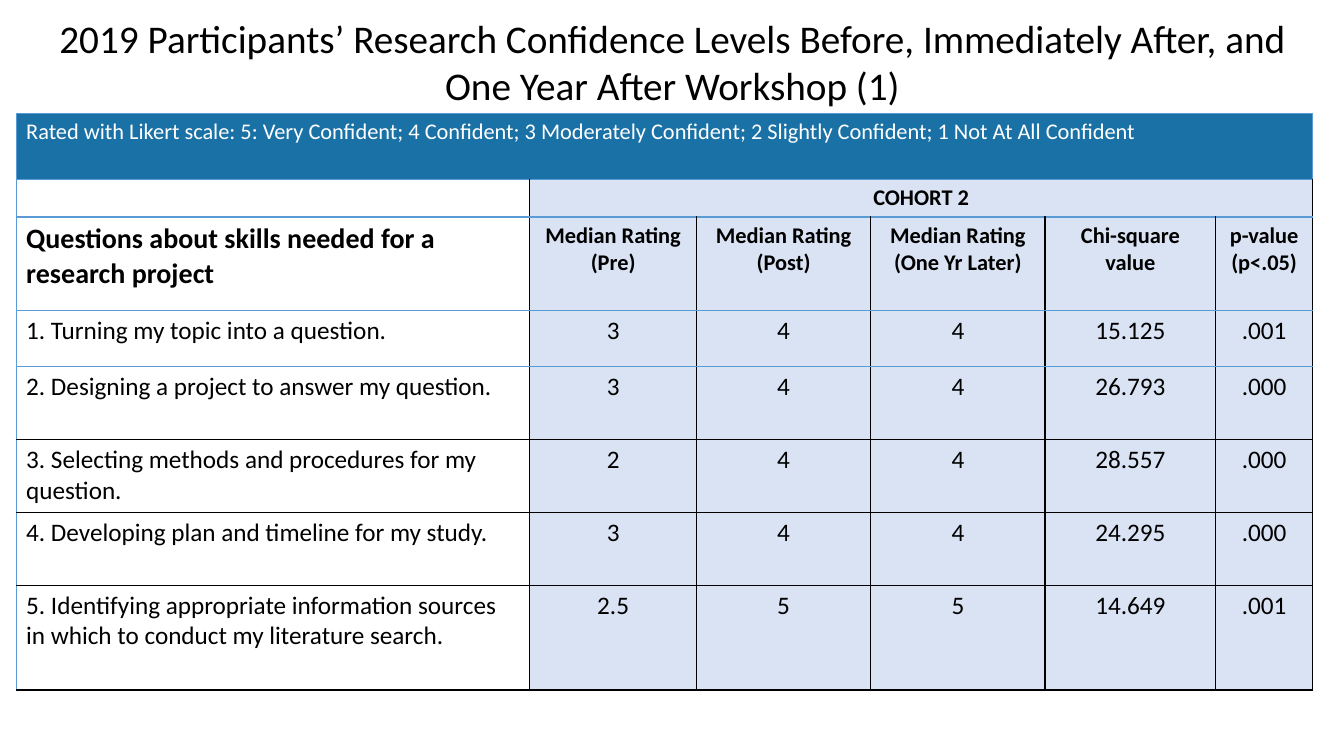
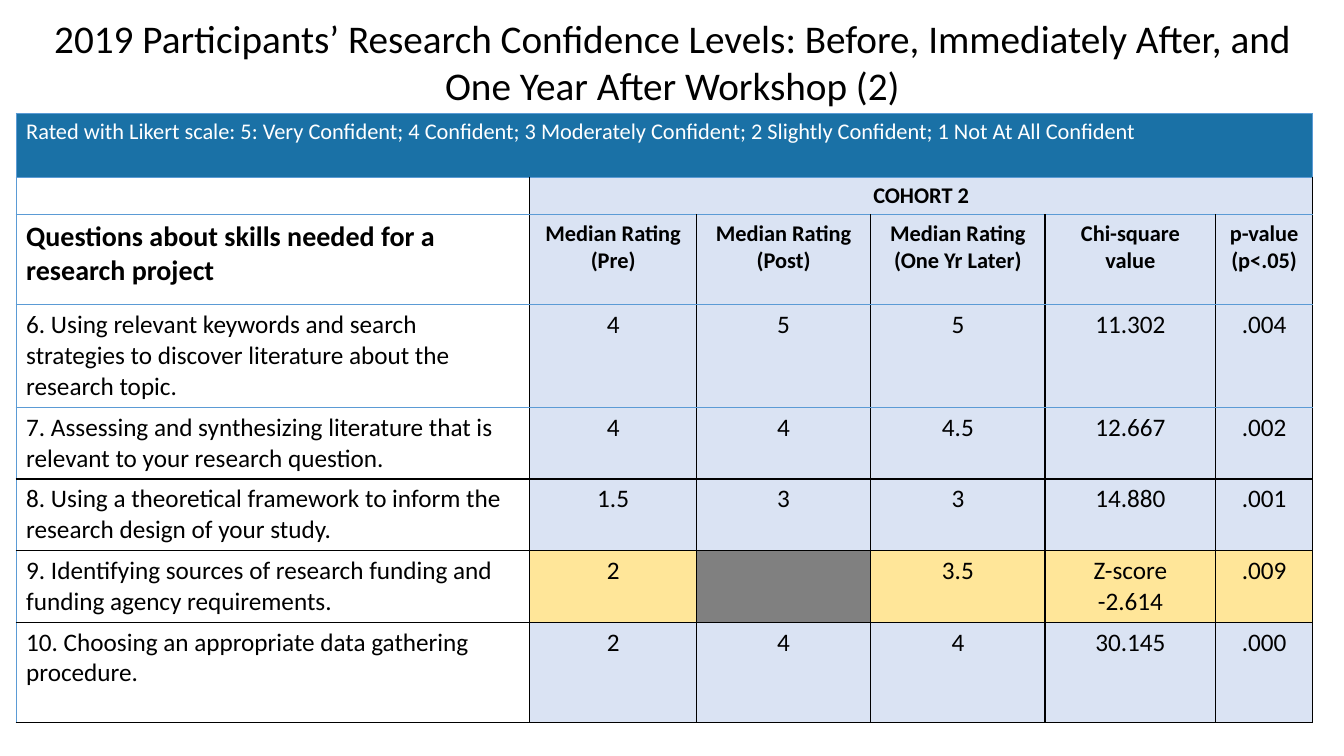
"""Build two slides of survey tables on research confidence."""
from dataclasses import dataclass

from lxml import etree
from pptx import Presentation
from pptx.dml.color import RGBColor
from pptx.enum.text import MSO_ANCHOR, MSO_AUTO_SIZE, PP_ALIGN
from pptx.oxml.ns import qn
from pptx.slide import Slide
from pptx.table import Table, _Cell
from pptx.util import Pt

LEFT, MID = PP_ALIGN.LEFT, PP_ALIGN.CENTER
TOP = MSO_ANCHOR.TOP
FIXED = MSO_AUTO_SIZE.NONE
TITLE_ONLY = 5


@dataclass(frozen=True)
class Theme:
    font: str = "Calibri"
    black: str = "000000"
    white: str = "FFFFFF"
    band: str = "1A71A6"
    rule: str = "5B9BD5"
    tint: str = "DAE3F3"
    gold: str = "FFE699"
    gray: str = "808080"
    title: int = 28
    lead: int = 20
    body: int = 18
    small: int = 16
    line: int = 1


@dataclass(frozen=True)
class Look:
    size: int
    fill: str
    ink: str
    bold: bool = False
    align: PP_ALIGN = MID


@dataclass(frozen=True)
class Item:
    text: str
    values: tuple[str, ...]
    marked: bool = False


@dataclass(frozen=True)
class Page:
    title: str
    heights: tuple[float, ...]
    items: tuple[Item, ...]


THEME = Theme()
BAND = Look(THEME.small, THEME.band, THEME.white, align=LEFT)
BLANK = Look(THEME.small, THEME.white, THEME.black)
HEAD = Look(THEME.small, THEME.tint, THEME.black, True)
LEAD = Look(THEME.lead, THEME.white, THEME.black, True, LEFT)
ITEM = Look(THEME.body, THEME.white, THEME.black, align=LEFT)
VALUE = Look(THEME.body, THEME.tint, THEME.black)
MARK = Look(THEME.body, THEME.gold, THEME.black)
VOID = Look(THEME.body, THEME.gray, THEME.black)

WIDTHS = (367, 119, 124.5, 124.5, 122, 69)
BLUE_ROWS = 4
SCALE = ("Rated with Likert scale: 5: Very Confident; 4 Confident; "
         "3 Moderately Confident; 2 Slightly Confident; 1 Not At All Confident")
LABELS = (
    "Questions about skills needed for a research project",
    "Median Rating\n(Pre)",
    "Median Rating\n(Post)",
    "Median Rating\n(One Yr Later)",
    "Chi-square value",
    "p-value (p<.05)",
)

PAGES = (
    Page(
        "2019 Participants’ Research Confidence Levels Before, "
        "Immediately After, and One Year After Workshop (1)",
        (47, 27, 67, 40, 52, 52, 52, 75),
        (
            Item("1. Turning my topic into a question.",
                 ("3", "4", "4", "15.125", ".001")),
            Item("2. Designing a project to answer my question.",
                 ("3", "4", "4", "26.793", ".000")),
            Item("3. Selecting methods and procedures for my question.",
                 ("2", "4", "4", "28.557", ".000")),
            Item("4. Developing plan and timeline for my study.",
                 ("3", "4", "4", "24.295", ".000")),
            Item("5. Identifying appropriate information sources in which "
                 "to conduct my literature search.",
                 ("2.5", "5", "5", "14.649", ".001")),
        ),
    ),
    Page(
        "2019 Participants’ Research Confidence Levels: Before, "
        "Immediately After, and One Year After Workshop (2)",
        (45.5, 26.5, 64.5, 72, 50.5, 50.5, 50.5, 71.5),
        (
            Item("6. Using relevant keywords and search strategies to "
                 "discover literature about the research topic.",
                 ("4", "5", "5", "11.302", ".004")),
            Item("7. Assessing and synthesizing literature that is relevant "
                 "to your research question.",
                 ("4", "4", "4.5", "12.667", ".002")),
            Item("8. Using a theoretical framework to inform the research "
                 "design of your study.",
                 ("1.5", "3", "3", "14.880", ".001")),
            Item("9. Identifying sources of research funding and funding "
                 "agency requirements.",
                 ("2", "", "3.5", "Z-score\n-2.614", ".009"), True),
            Item("10. Choosing an appropriate data gathering procedure.",
                 ("2", "4", "4", "30.145", ".000")),
        ),
    ),
)


def add_rules(cell: _Cell, row: int, col: int) -> None:
    """Draw the four borders of a cell, blue around the head rows."""
    blue = {
        "a:lnL": row == 0 or col == 0,
        "a:lnR": row == 0,
        "a:lnT": row <= BLUE_ROWS,
        "a:lnB": row < BLUE_ROWS,
    }
    props = cell._tc.get_or_add_tcPr()
    for tag, is_blue in blue.items():
        line = etree.SubElement(props, qn(tag), w=str(Pt(THEME.line)))
        fill = etree.SubElement(line, qn("a:solidFill"))
        etree.SubElement(fill, qn("a:srgbClr"),
                         val=THEME.rule if is_blue else THEME.black)


def fill_cell(cell: _Cell, text: str, look: Look) -> None:
    """Set the text, type and fill of a cell."""
    cell.fill.solid()
    cell.fill.fore_color.rgb = RGBColor.from_string(look.fill)
    cell.vertical_anchor = TOP
    cell.text_frame.text = text
    for para in cell.text_frame.paragraphs:
        para.alignment = look.align
        for run in para.runs:
            run.font.name = THEME.font
            run.font.size = Pt(look.size)
            run.font.bold = look.bold
            run.font.color.rgb = RGBColor.from_string(look.ink)
        if not para.runs:
            etree.SubElement(para._p, qn("a:endParaRPr"),
                             sz=str(look.size * 100))


def list_rows(page: Page) -> list[list[tuple[str, Look]]]:
    """Return the text and look of every cell, row by row."""
    span = len(WIDTHS) - 1
    rows = [
        [(SCALE, BAND)] + [("", BAND)] * span,
        [("", BLANK), ("COHORT 2", HEAD)] + [("", HEAD)] * (span - 1),
        [(text, HEAD if col else LEAD) for col, text in enumerate(LABELS)],
    ]
    for item in page.items:
        look = MARK if item.marked else VALUE
        rows.append([(item.text, ITEM)]
                    + [(val, look if val else VOID) for val in item.values])
    return rows


def add_grid(slide: Slide, page: Page) -> Table:
    """Add the ratings table of a page."""
    rows = list_rows(page)
    grid = slide.shapes.add_table(
        len(rows), len(WIDTHS), Pt(11.5), Pt(81),
        Pt(sum(WIDTHS)), Pt(sum(page.heights))).table
    grid.first_row = grid.horz_banding = False
    for col, width in zip(grid.columns, WIDTHS):
        col.width = Pt(width)
    for row, height in zip(grid.rows, page.heights):
        row.height = Pt(height)
    for row, cells in enumerate(rows):
        for col, (text, look) in enumerate(cells):
            cell = grid.cell(row, col)
            add_rules(cell, row, col)
            fill_cell(cell, text, look)
    last = len(WIDTHS) - 1
    for row in (0, 1):
        grid.cell(row, row).merge(grid.cell(row, last))
    return grid


def set_title(slide: Slide, text: str) -> None:
    """Place and format the slide title."""
    title = slide.shapes.title
    title.left, title.top = Pt(23), Pt(6.5)
    title.width, title.height = Pt(914.5), Pt(75)
    frame = title.text_frame
    frame.text = text
    frame.word_wrap = True
    frame.auto_size = FIXED
    frame.vertical_anchor = TOP
    para = frame.paragraphs[0]
    para.alignment = MID
    for run in para.runs:
        run.font.name = THEME.font
        run.font.size = Pt(THEME.title)
        run.font.color.rgb = RGBColor.from_string(THEME.black)


def main() -> None:
    """Build and save the deck."""
    deck = Presentation()
    deck.slide_width, deck.slide_height = Pt(960), Pt(540)
    for page in PAGES:
        slide = deck.slides.add_slide(deck.slide_layouts[TITLE_ONLY])
        add_grid(slide, page)
        set_title(slide, page.title)
    deck.save("out.pptx")


if __name__ == "__main__":
    main()
